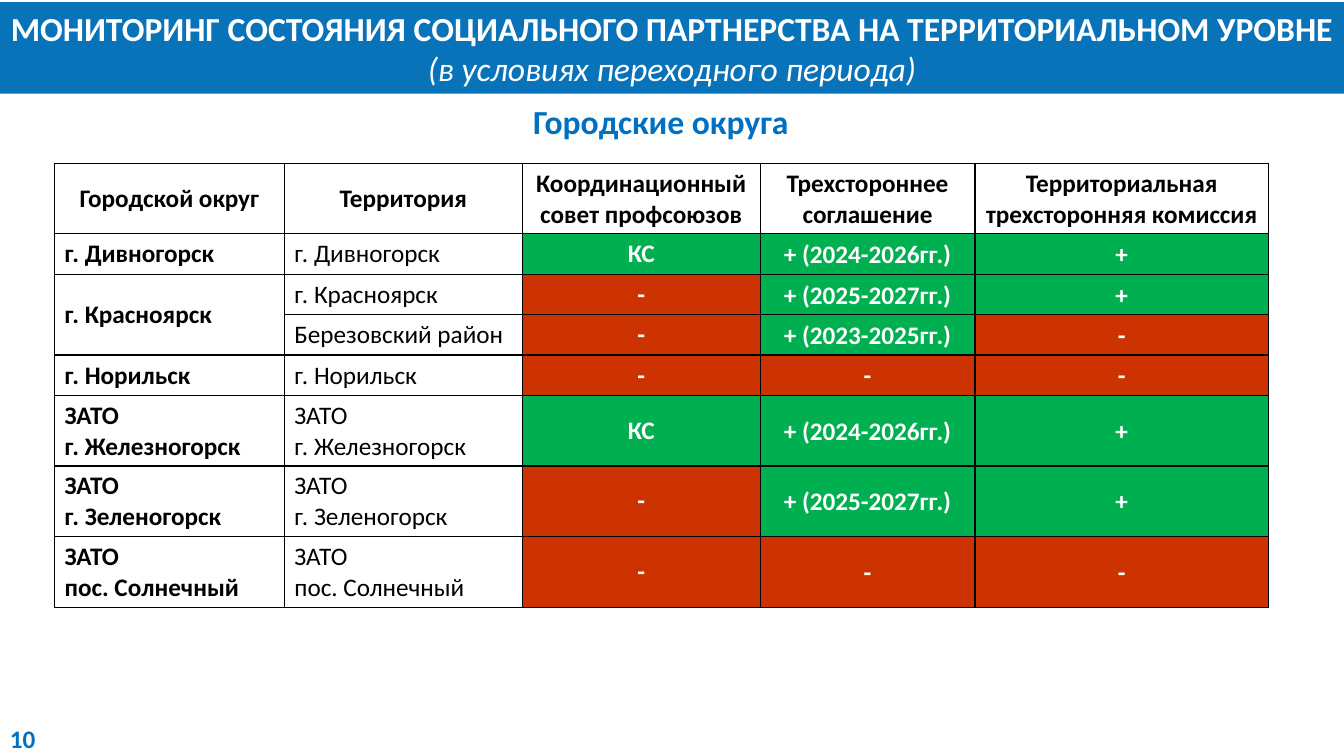
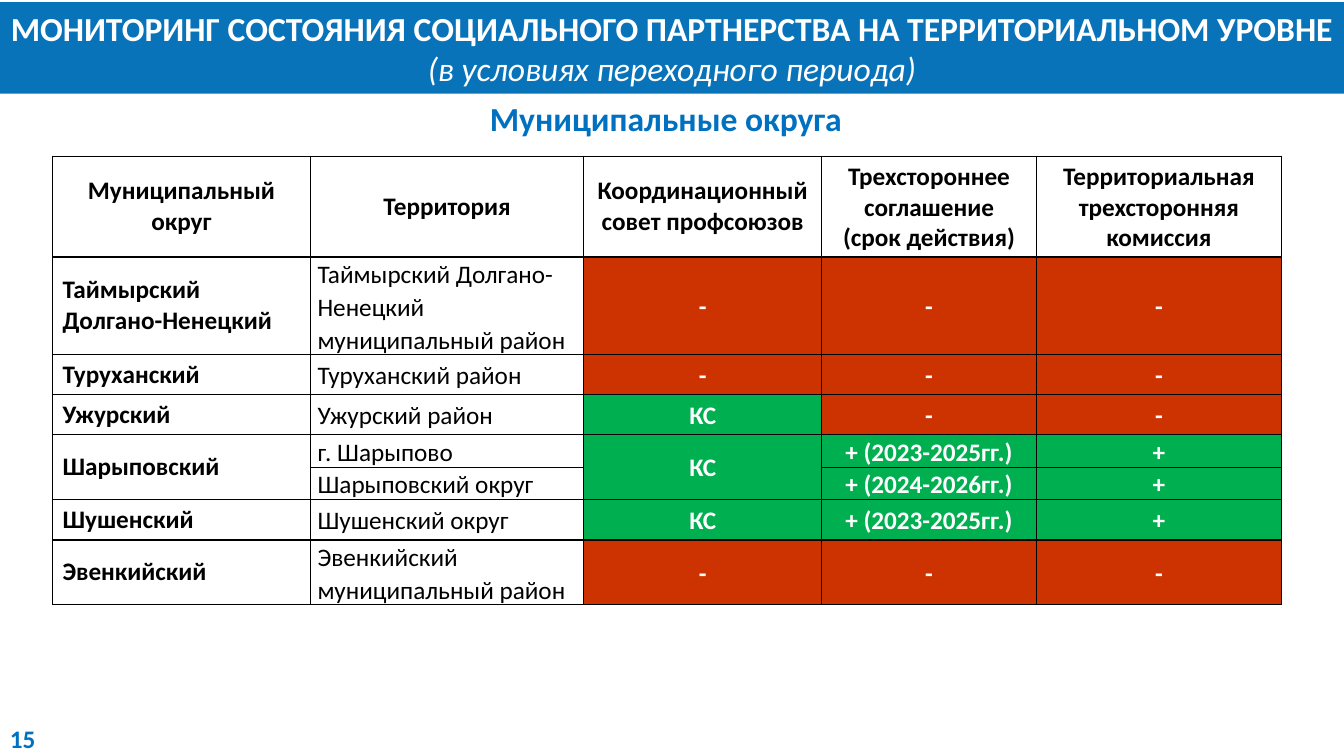
from lxml import etree
from pptx import Presentation
from pptx.dml.color import RGBColor
from pptx.enum.text import MSO_ANCHOR, MSO_AUTO_SIZE, PP_ALIGN
from pptx.oxml.ns import qn
from pptx.util import Inches, Pt

MIDDLE = MSO_ANCHOR.MIDDLE
NO_FIT = MSO_AUTO_SIZE.NONE
LEFT, CENTER = PP_ALIGN.LEFT, PP_ALIGN.CENTER
TITLE_ONLY = 5
SLIDE_WIDTH, SLIDE_HEIGHT = 13.33, 7.5

COLORS = {
    "band": "0973BA",
    "accent": "0070C0",
    "yes": "00B050",
    "no": "CC3300",
    "black": "000000",
    "white": "FFFFFF",
}
BASE = {"name": "Calibri", "size": Pt(18), "bold": True, "italic": False}
LARGE = {**BASE, "size": Pt(24)}
STYLES = {
    "title": (LARGE, "white"),
    "subtitle": ({**LARGE, "bold": False, "italic": True}, "white"),
    "heading": (LARGE, "accent"),
    "page": (BASE, "accent"),
    "label": (BASE, "black"),
    "territory": ({**BASE, "bold": False}, "black"),
    "status": (BASE, "white"),
}
COMPACT_MARGINS = {
    "margin_left": Inches(0.07),
    "margin_right": Inches(0.07),
    "margin_top": 0,
    "margin_bottom": 0,
}
COMPACT_SPACING = {"line_spacing": 1.07, "space_after": Pt(8)}

TITLE = "МОНИТОРИНГ СОСТОЯНИЯ СОЦИАЛЬНОГО ПАРТНЕРСТВА НА ТЕРРИТОРИАЛЬНОМ УРОВНЕ"
SUBTITLE = "(в условиях переходного периода)"

PAGES = [
    {
        "number": "10",
        "heading": "Городские округа",
        "heading_at": (5.19, 0.95, 2.75, 0.5),
        "table_at": (0.54, 1.62),
        "columns": [2.28, 2.36, 2.36, 2.13, 2.91],
        "heights": [0.7, 0.4, 0.4, 0.4, 0.4, 0.7, 0.7, 0.7],
        "first_compact": 3,
        "rows": [
            ["Городской округ", "Территория", "Координационный совет профсоюзов",
             "Трехстороннее соглашение", "Территориальная трехсторонняя комиссия"],
            ["г. Дивногорск", "г. Дивногорск", "КС", "+ (2024-2026гг.)", "+"],
            ["г. Красноярск", "г. Красноярск", "-", "+ (2025-2027гг.)", "+"],
            [None, "Березовский район", "-", "+ (2023-2025гг.)", "-"],
            ["г. Норильск", "г. Норильск", "-", "-", "-"],
            ["ЗАТО\nг. Железногорск", "ЗАТО\nг. Железногорск", "КС", "+ (2024-2026гг.)", "+"],
            ["ЗАТО\nг. Зеленогорск", "ЗАТО\nг. Зеленогорск", "-", "+ (2025-2027гг.)", "+"],
            ["ЗАТО\nпос. Солнечный", "ЗАТО\nпос. Солнечный", "-", "-", "-"],
        ],
    },
    {
        "number": "15",
        "heading": "Муниципальные округа",
        "heading_at": (4.76, 0.92, 3.81, 0.5),
        "table_at": (0.52, 1.55),
        "columns": [2.56, 2.71, 2.36, 2.13, 2.43],
        "heights": [1, 0.96, 0.4, 0.4, 0.32, 0.32, 0.4, 0.64],
        "first_compact": 1,
        "rows": [
            ["Муниципальный округ", "Территория", "Координационный совет профсоюзов",
             "Трехстороннее соглашение\n(срок действия)",
             "Территориальная трехсторонняя комиссия"],
            ["Таймырский Долгано-Ненецкий",
             "Таймырский Долгано-Ненецкий муниципальный район", "-", "-", "-"],
            ["Туруханский", "Туруханский район", "-", "-", "-"],
            ["Ужурский", "Ужурский район", "КС", "-", "-"],
            ["Шарыповский", "г. Шарыпово", "КС", "+ (2023-2025гг.)", "+"],
            [None, "Шарыповский округ", None, "+ (2024-2026гг.)", "+"],
            ["Шушенский", "Шушенский округ", "КС", "+ (2023-2025гг.)", "+"],
            ["Эвенкийский", "Эвенкийский муниципальный район", "-", "-", "-"],
        ],
    },
]


def set_values(target, values):
    """Set every attribute named in a dict of format values."""
    for name, value in values.items():
        setattr(target, name, value)


def paint(fill, color):
    """Give a fill one solid colour from the palette."""
    fill.solid()
    fill.fore_color.rgb = RGBColor.from_string(COLORS[color])


def style_span(span, style):
    """Apply a named text style to a run."""
    values, color = STYLES[style]
    set_values(span.font, values)
    span.font.color.rgb = RGBColor.from_string(COLORS[color])


def write(para, text, style, alignment=LEFT):
    """Fill a paragraph with text in a named style."""
    para.text = text
    para.alignment = alignment
    for span in para.runs:
        style_span(span, style)


def add_title(page):
    """Turn the title placeholder into the blue band with two lines."""
    band = page.shapes.title
    band.left, band.top = 0, Inches(0.02)
    band.width, band.height = Inches(SLIDE_WIDTH), Inches(0.91)
    paint(band.fill, "band")
    frame = band.text_frame
    set_values(frame, {"word_wrap": True, "auto_size": NO_FIT, "vertical_anchor": MIDDLE})
    para = frame.paragraphs[0]
    write(para, TITLE, "title", CENTER)
    para.add_line_break()
    span = para.add_run()
    span.text = SUBTITLE
    style_span(span, "subtitle")


def add_text(page, place, text, style, wrap):
    """Add a one-line text box."""
    box = page.shapes.add_textbox(*map(Inches, place))
    box.text_frame.word_wrap = wrap
    write(box.text_frame.paragraphs[0], text, style)


def add_borders(cell):
    """Draw thin black lines on the four sides of a cell."""
    properties = cell._tc.get_or_add_tcPr()
    for side in ("a:lnL", "a:lnR", "a:lnT", "a:lnB"):
        line = etree.SubElement(properties, qn(side), w=str(Pt(1)))
        fill = etree.SubElement(line, qn("a:solidFill"))
        etree.SubElement(fill, qn("a:srgbClr"), val=COLORS["black"])


def format_cell(cell, text, row, column, first_compact):
    """Write one cell and choose its look by row and column."""
    add_borders(cell)
    cell.vertical_anchor = MIDDLE
    is_status = row > 0 and column > 1
    if is_status:
        paint(cell.fill, "no" if text == "-" else "yes")
    else:
        cell.fill.background()
    if text is None:
        return
    para = cell.text_frame.paragraphs[0]
    if is_status:
        style = "status"
    else:
        style = "territory" if row > 0 and column == 1 else "label"
    write(para, text, style, CENTER if row == 0 or is_status else LEFT)
    if row > 0 and column >= first_compact:
        set_values(cell, COMPACT_MARGINS)
        set_values(para, COMPACT_SPACING)


def add_status_table(page, content):
    """Add the table, joining each empty cell to the one above."""
    rows, widths, heights = (content[key] for key in ("rows", "columns", "heights"))
    place = (*content["table_at"], sum(widths), sum(heights))
    table = page.shapes.add_table(len(rows), len(widths), *map(Inches, place)).table
    set_values(table, {"first_row": False, "horz_banding": False})
    for column, width in zip(table.columns, widths):
        column.width = Inches(width)
    for row, height in zip(table.rows, heights):
        row.height = Inches(height)
    for r, texts in enumerate(rows):
        for c, text in enumerate(texts):
            cell = table.cell(r, c)
            format_cell(cell, text, r, c, content["first_compact"])
            if text is None:
                table.cell(r - 1, c).merge(cell)


def main():
    """Build the deck and save it."""
    deck = Presentation()
    deck.slide_width, deck.slide_height = Inches(SLIDE_WIDTH), Inches(SLIDE_HEIGHT)
    for content in PAGES:
        page = deck.slides.add_slide(deck.slide_layouts[TITLE_ONLY])
        add_title(page)
        add_text(page, content["heading_at"], content["heading"], "heading", False)
        add_status_table(page, content)
        add_text(page, (0, 7.13, 0.52, 0.4), content["number"], "page", True)
    deck.save("out.pptx")


if __name__ == "__main__":
    main()
